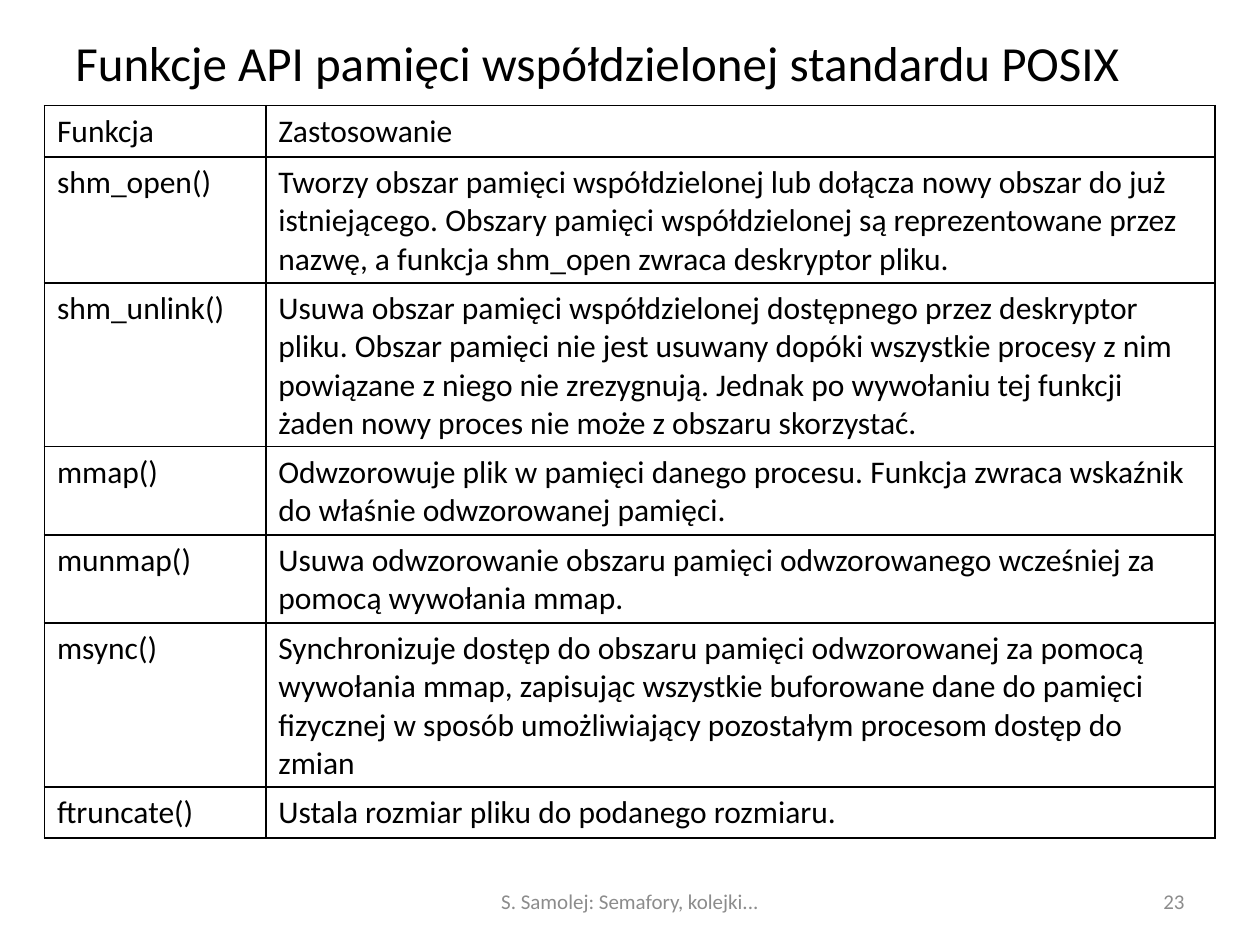
"""Build the slide listing the POSIX shared memory API functions."""
import pptx
import pptx.dml.color
import pptx.enum.text
import pptx.oxml
import pptx.oxml.ns
import pptx.util
from pptx.util import Pt

ALIGN = pptx.enum.text.PP_ALIGN
FONT = "Calibri"
BLACK, GREY = "000000", "8C8C8C"

TEXTS = [
    ("Funkcje API pamięci współdzielonej standardu POSIX", (36, 21.6, 653, 27.4), 28, BLACK, ALIGN.LEFT),
    ("S. Samolej: Semafory, kolejki...", (246, 500.5, 228, 28.75), 12, GREY, ALIGN.CENTER),
    ("23", (516, 500.5, 168, 28.75), 12, GREY, ALIGN.RIGHT),
]
ROWS = [
    ("Funkcja", "Zastosowanie"),
    ("shm_open()", "Tworzy obszar pamięci współdzielonej lub dołącza nowy obszar do już istniejącego. "
     "Obszary pamięci współdzielonej są reprezentowane przez nazwę, a funkcja shm_open zwraca "
     "deskryptor pliku."),
    ("shm_unlink()", "Usuwa obszar pamięci współdzielonej dostępnego przez deskryptor pliku. "
     "Obszar pamięci nie jest usuwany dopóki wszystkie procesy z nim powiązane z niego nie "
     "zrezygnują. Jednak po wywołaniu tej funkcji żaden nowy proces nie może z obszaru skorzystać."),
    ("mmap()", "Odwzorowuje plik w pamięci danego procesu. Funkcja zwraca wskaźnik do właśnie "
     "odwzorowanej pamięci."),
    ("munmap()", "Usuwa odwzorowanie obszaru pamięci odwzorowanego wcześniej za pomocą wywołania mmap."),
    ("msync()", "Synchronizuje dostęp do obszaru pamięci odwzorowanej za pomocą wywołania mmap, "
     "zapisując wszystkie buforowane dane do pamięci fizycznej w sposób umożliwiający pozostałym "
     "procesom dostęp do zmian"),
    ("ftruncate()", "Ustala rozmiar pliku do podanego rozmiaru."),
]
TABLE_BOX = (25.4, 60.4, 669, 418)
COLUMN_WIDTHS = (126.5, 542.5)
ROW_HEIGHT = 29.2


def color(value):
    return pptx.dml.color.RGBColor.from_string(value)


def style(paragraph, size, ink):
    paragraph.font.name = FONT
    paragraph.font.size = Pt(size)
    paragraph.font.color.rgb = color(ink)


def add_text(slide, text, box, size, ink, alignment):
    frame = slide.shapes.add_textbox(*map(Pt, box)).text_frame
    frame.word_wrap = True
    frame.vertical_anchor = pptx.enum.text.MSO_ANCHOR.MIDDLE
    paragraph = frame.paragraphs[0]
    paragraph.text = text
    paragraph.alignment = alignment
    style(paragraph, size, ink)


def add_borders(cell, ink, width):
    properties = cell._tc.get_or_add_tcPr()
    for index, side in enumerate(("lnL", "lnR", "lnT", "lnB")):
        line = pptx.oxml.parse_xml(
            f'<a:{side} {pptx.oxml.ns.nsdecls("a")} w="{Pt(width)}">'
            f'<a:solidFill><a:srgbClr val="{ink}"/></a:solidFill></a:{side}>')
        properties.insert(index, line)


def add_table(slide):
    shape = slide.shapes.add_table(len(ROWS), len(COLUMN_WIDTHS), *map(Pt, TABLE_BOX))
    table = shape.table
    table.first_row = table.horz_banding = False
    for column, width in zip(table.columns, COLUMN_WIDTHS):
        column.width = Pt(width)
    for row, texts in zip(table.rows, ROWS):
        row.height = Pt(ROW_HEIGHT)
        for cell, text in zip(row.cells, texts):
            cell.text = text
            cell.fill.background()
            style(cell.text_frame.paragraphs[0], 18, BLACK)
            add_borders(cell, BLACK, 1)
    shape.height = Pt(TABLE_BOX[3])


def main():
    presentation = pptx.Presentation()
    presentation.slide_width, presentation.slide_height = Pt(720), Pt(540)
    slide = presentation.slides.add_slide(presentation.slide_layouts[6])
    for item in TEXTS:
        add_text(slide, *item)
    add_table(slide)
    presentation.save("out.pptx")


if __name__ == "__main__":
    main()
